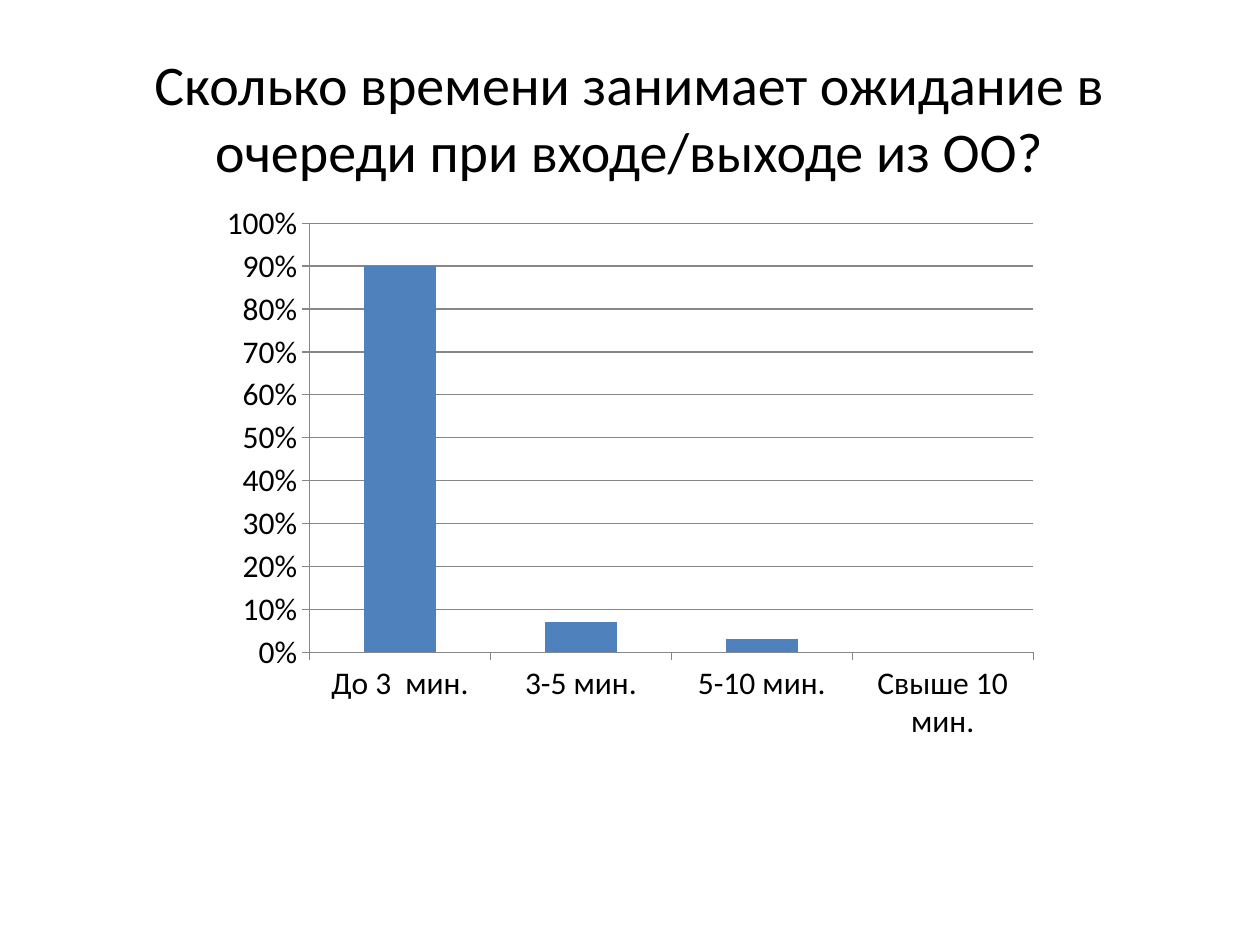
from dataclasses import dataclass

from pptx import Presentation
from pptx.chart import data as chart_data
from pptx.dml import color
from pptx.enum import chart as chart_enum
from pptx.enum import text
from pptx.util import Emu, Pt

PX_PER_INCH = 126
FONT = "Calibri"
BLACK = "000000"
GREY = "878787"
BLUE = "4F81BD"


@dataclass(frozen=True)
class Box:
    left: int
    top: int
    width: int
    height: int

    def emu(self) -> list[Emu]:
        return [px(n) for n in (self.left, self.top, self.width, self.height)]


@dataclass(frozen=True)
class Answer:
    label: str
    share: float | None


ANSWERS = [
    Answer("До 3  мин.", 0.9),
    Answer("3-5 мин.", 0.07),
    Answer("5-10 мин.", 0.03),
    Answer("Свыше 10 мин.", None),
]


def px(length: int) -> Emu:
    return Emu(round(length * 914400 / PX_PER_INCH))


def rgb(value: str) -> color.RGBColor:
    return color.RGBColor.from_string(value)


def style_font(font, size: int, fill: str = BLACK) -> None:
    font.name = FONT
    font.size = Pt(size)
    font.bold = False
    font.color.rgb = rgb(fill)


def write_title(title, box: Box, words: str, *, size: int) -> None:
    title.left, title.top, title.width, title.height = box.emu()
    frame = title.text_frame
    frame.word_wrap = True
    frame.auto_size = text.MSO_AUTO_SIZE.NONE
    frame.vertical_anchor = text.MSO_ANCHOR.MIDDLE
    para = frame.paragraphs[0]
    para.alignment = text.PP_ALIGN.CENTER
    span = para.add_run()
    span.text = words
    style_font(span.font, size)


def style_line(line) -> None:
    line.color.rgb = rgb(GREY)
    line.width = Pt(0.75)


def style_axis(axis) -> None:
    axis.major_tick_mark = chart_enum.XL_TICK_MARK.OUTSIDE
    axis.minor_tick_mark = chart_enum.XL_TICK_MARK.NONE
    style_line(axis.format.line)


def draw_answers(page, box: Box, answers: list[Answer]) -> None:
    data = chart_data.CategoryChartData(number_format="0%")
    data.categories = [answer.label for answer in answers]
    data.add_series("Series 1", [answer.share for answer in answers])
    kind = chart_enum.XL_CHART_TYPE.COLUMN_CLUSTERED
    chart = page.shapes.add_chart(kind, *box.emu(), data).chart
    chart.has_legend = False
    chart.has_title = False
    style_font(chart.font, 18)

    style_axis(chart.category_axis)
    scale = chart.value_axis
    style_axis(scale)
    scale.minimum_scale = 0
    scale.maximum_scale = 1
    scale.major_unit = 0.1
    scale.has_major_gridlines = True
    style_line(scale.major_gridlines.format.line)
    scale.tick_labels.number_format = "0%"
    scale.tick_labels.number_format_is_linked = False

    plot = chart.plots[0]
    plot.gap_width = 150
    plot.vary_by_categories = False
    fill = plot.series[0].format.fill
    fill.solid()
    fill.fore_color.rgb = rgb(BLUE)


def main() -> None:
    deck = Presentation()
    deck.slide_width, deck.slide_height = px(1260), px(945)
    page = deck.slides.add_slide(deck.slide_layouts.get_by_name("Title Only"))
    write_title(
        page.shapes.title,
        Box(94, 37, 1071, 159),
        "Сколько времени занимает ожидание в очереди при входе/выходе из ОО?",
        size=32,
    )
    draw_answers(page, Box(210, 193, 840, 559), ANSWERS)
    deck.save("out.pptx")


if __name__ == "__main__":
    main()
